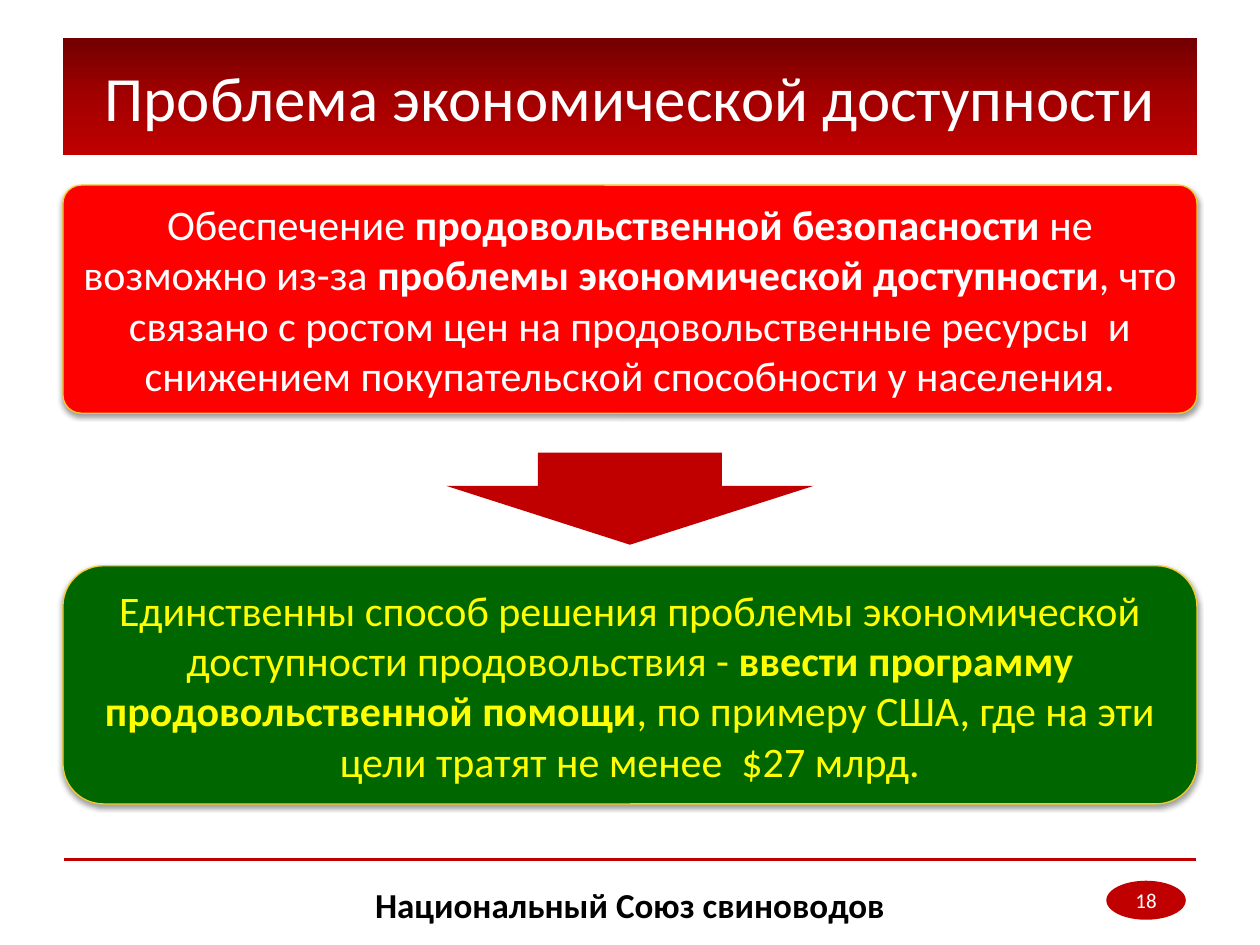
"""Build the slide on the affordability of food."""
import copy
from dataclasses import dataclass

import pptx
import pptx.dml.color
import pptx.enum.shapes
import pptx.enum.text
import pptx.oxml
import pptx.oxml.ns
import pptx.util

Pt = pptx.util.Pt
MSO = pptx.enum.shapes.MSO_SHAPE
FONT = "Calibri"
LEFT, WIDTH = 36, 648
COLORS = {
    "white": "FFFFFF", "black": "000000", "yellow": "FFFF00",
    "red": "FF0000", "crimson": "C00000", "green": "006600", "gold": "F4CB27",
}
TITLE_STOPS = ((0, "720000"), (0.5, "A20000"), (1, "C00000"))
SHADOW = (
    '<a:effectLst {}><a:outerShdw blurRad="39370" dist="20320" dir="5400000" rotWithShape="0">'
    '<a:srgbClr val="000000"><a:alpha val="38000"/></a:srgbClr></a:outerShdw></a:effectLst>'
).format(pptx.oxml.ns.nsdecls("a"))


@dataclass
class Panel:
    top: float
    height: float
    corner: float
    fill: str
    color: str
    phrases: tuple[tuple[str, bool], ...]


PANELS = (
    Panel(105.8, 130.3, 0.08, "red", "white", (
        ("Обеспечение ", False),
        ("продовольственной безопасности ", True),
        ("не возможно из-за ", False),
        ("проблемы экономической доступности", True),
        (", что связано с ростом цен на продовольственные ресурсы  и снижением "
         "покупательской способности у населения.", False),
    )),
    Panel(323.3, 136.1, 0.17, "green", "yellow", (
        ("Единственны способ решения проблемы экономической доступности продовольствия - ", False),
        ("ввести программу продовольственной помощи", True),
        (", по примеру США, где на эти цели тратят не менее  $27 млрд.", False),
    )),
)


def rgb(name: str) -> pptx.dml.color.RGBColor:
    """Return the named colour."""
    return pptx.dml.color.RGBColor.from_string(COLORS[name])


def add_shape(slide, kind, left: float, top: float, width: float, height: float, fill: str):
    """Add a flat shape without an outline."""
    s = slide.shapes.add_shape(kind, Pt(left), Pt(top), Pt(width), Pt(height))
    s.shadow.inherit = False
    s.fill.solid()
    s.fill.fore_color.rgb = rgb(fill)
    s.line.fill.background()
    return s


def write(s, phrases: tuple[tuple[str, bool], ...], size: float, color: str) -> None:
    """Write one centred paragraph of plain and bold phrases."""
    tf = s.text_frame
    tf.word_wrap = True
    tf.vertical_anchor = pptx.enum.text.MSO_ANCHOR.MIDDLE
    p = tf.paragraphs[0]
    p.alignment = pptx.enum.text.PP_ALIGN.CENTER
    for text, bold in phrases:
        r = p.add_run()
        r.text = text
        r.font.name, r.font.size, r.font.bold = FONT, Pt(size), bold
        r.font.color.rgb = rgb(color)


def add_title(slide, text: str) -> None:
    """Add the title band with its gradient."""
    s = add_shape(slide, MSO.RECTANGLE, LEFT, 21.6, WIDTH, 67, "crimson")
    s.fill.gradient()
    s.fill.gradient_angle = 270
    first = s.fill._xPr.find(".//" + pptx.oxml.ns.qn("a:gs"))
    first.addnext(copy.deepcopy(first))
    for stop, (position, value) in zip(s.fill.gradient_stops, TITLE_STOPS):
        stop.position = position
        stop.color.rgb = pptx.dml.color.RGBColor.from_string(value)
    write(s, ((text, False),), 36, "white")


def add_panel(slide, panel: Panel) -> None:
    """Add a rounded panel with a soft shadow."""
    s = add_shape(slide, MSO.ROUNDED_RECTANGLE, LEFT, panel.top, WIDTH, panel.height, panel.fill)
    s.adjustments[0] = panel.corner
    s.line.color.rgb = rgb("gold")
    s.line.width = Pt(0.75)
    effects = s._element.spPr.find(pptx.oxml.ns.qn("a:effectLst"))
    effects.getparent().replace(effects, pptx.oxml.parse_xml(SHADOW))
    write(s, panel.phrases, 24, panel.color)


def add_footer(slide, text: str, number: str) -> None:
    """Add the rule, the footer text and the page number."""
    rule = slide.shapes.add_connector(
        pptx.enum.shapes.MSO_CONNECTOR.STRAIGHT, Pt(683.3), Pt(491), Pt(36.7), Pt(491))
    rule.line.color.rgb = rgb("crimson")
    rule.line.width = Pt(1.5)
    rule._element.spPr.append(pptx.oxml.parse_xml(
        f'<a:effectLst {pptx.oxml.ns.nsdecls("a")}/>'))
    s = slide.shapes.add_textbox(Pt(144.7), Pt(502.6), Pt(430.6), Pt(28.8))
    write(s, ((text, True),), 20, "black")
    s = add_shape(slide, MSO.OVAL, 632.2, 503.3, 45.4, 22.3, "crimson")
    tf = s.text_frame
    tf.margin_left = tf.margin_right = tf.margin_top = tf.margin_bottom = 0
    write(s, ((number, False),), 12, "white")


def main() -> None:
    """Build and save the presentation."""
    prs = pptx.Presentation()
    prs.slide_width, prs.slide_height = Pt(720), Pt(540)
    slide = prs.slides.add_slide(prs.slide_layouts[6])
    add_title(slide, "Проблема экономической доступности")
    for panel in PANELS:
        add_panel(slide, panel)
    arrow = add_shape(slide, MSO.DOWN_ARROW, 254.9, 258.7, 210.2, 52.6, "crimson")
    arrow.adjustments[0], arrow.adjustments[1] = 0.5, 0.64
    add_footer(slide, "Национальный Союз свиноводов", "18")
    prs.save("out.pptx")


if __name__ == "__main__":
    main()
